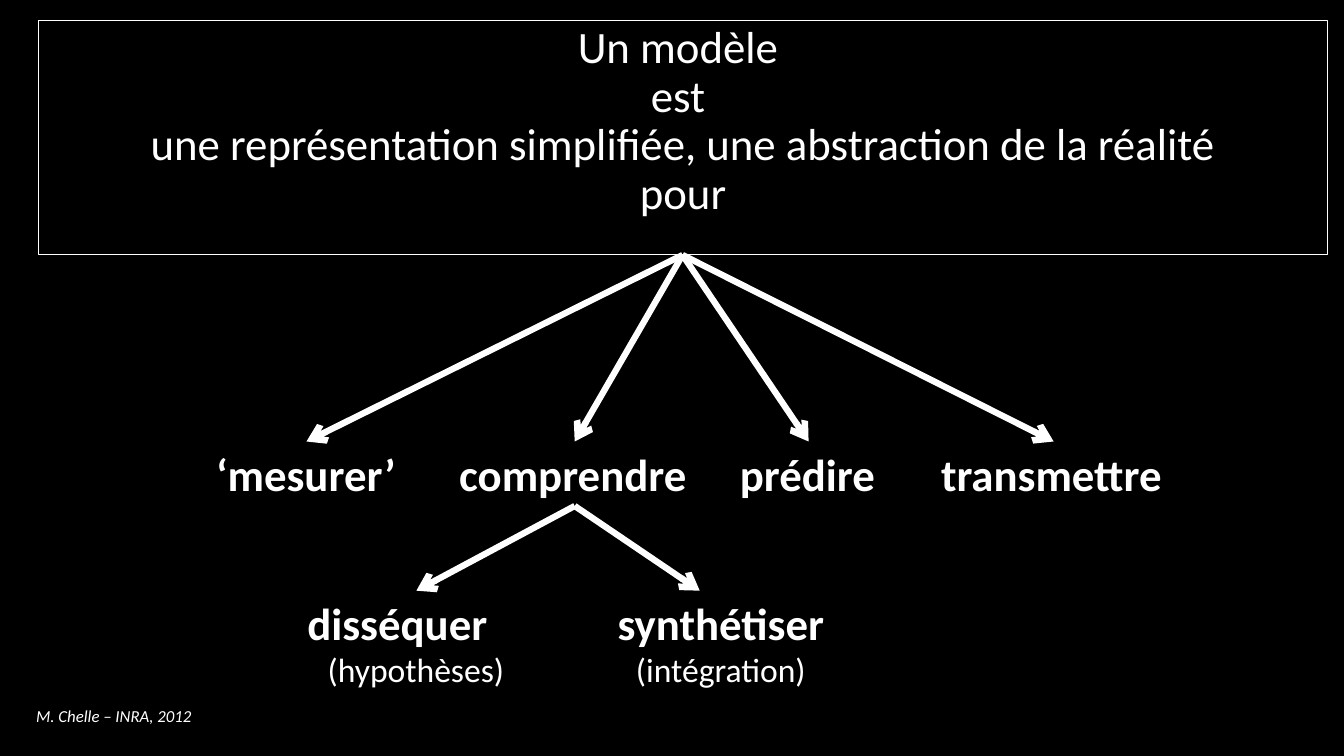
from lxml import etree
from pptx import Presentation
from pptx.dml.color import RGBColor
from pptx.enum import shapes, text
from pptx.oxml.ns import qn
from pptx.util import Inches, Pt

WHITE, BLACK = "FFFFFF", "000000"
LEFT, CENTER = text.PP_ALIGN.LEFT, text.PP_ALIGN.CENTER


def color(value):
    return RGBColor.from_string(value)


def write(frame, lines, wrap=True, anchor=text.MSO_ANCHOR.TOP):
    """Fill a text frame with (text, size, bold, italic, alignment) lines."""
    frame.word_wrap = wrap
    frame.vertical_anchor = anchor
    for index, (words, size, bold, italic, alignment) in enumerate(lines):
        paragraph = frame.add_paragraph() if index else frame.paragraphs[0]
        paragraph.text = words
        paragraph.alignment = alignment
        paragraph.font.name = "Calibri"
        paragraph.font.size = Pt(size)
        paragraph.font.bold = bold
        paragraph.font.italic = italic
        paragraph.font.color.rgb = color(WHITE)


presentation = Presentation()
presentation.slide_width = Inches(13.33)
presentation.slide_height = Inches(7.5)
slide = presentation.slides.add_slide(presentation.slide_layouts[5])
slide.background.fill.solid()
slide.background.fill.fore_color.rgb = color(BLACK)

# Framed definition
definition = slide.shapes.title
definition.left, definition.top = Inches(0.38), Inches(0.2)
definition.width, definition.height = Inches(12.79), Inches(2.33)
definition.line.color.rgb = color(WHITE)
definition.line.width = Pt(0.75)
sentence = ["Un modèle ", "est ",
            "une représentation simplifiée, une abstraction de la réalité", "pour"]
write(definition.text_frame, [(line, 32, False, False, CENTER) for line in sentence])
definition.text_frame.auto_size = text.MSO_AUTO_SIZE.NONE
for paragraph in definition.text_frame.paragraphs:
    paragraph.line_spacing = 0.9

# Purposes: label, centre, width
purpose_top, purpose_height = 4.38, 0.64
purposes = [("‘mesurer’", 3.04, 1.99), ("comprendre", 5.7, 2.49),
            ("prédire", 8.02, 1.56), ("transmettre", 10.45, 2.43)]
for label, center, width in purposes:
    box = slide.shapes.add_textbox(Inches(center - width / 2), Inches(purpose_top),
                                   Inches(width), Inches(purpose_height))
    write(box.text_frame, [(label, 32, True, False, LEFT)], wrap=False)

# Ways of understanding: label, detail, left, width, label alignment
step_top = 5.86
steps = [("disséquer", "(hypothèses)", 2.95, 2.35, LEFT),
         ("synthétiser", "(intégration)", 6.01, 2.28, CENTER)]
for label, detail, left, width, alignment in steps:
    box = slide.shapes.add_textbox(Inches(left), Inches(step_top),
                                   Inches(width), Inches(1.04))
    write(box.text_frame, [(label, 32, True, False, alignment),
                           (detail, 24, False, False, CENTER)])

# Arrows fanning out from the definition and from "comprendre"
fans = [(6.77, 2.53, purpose_top, [center for _, center, _ in purposes]),
        (5.7, purpose_top + purpose_height, step_top, [4.13, 6.94])]
for start_x, start_y, end_y, ends in fans:
    for end_x in ends:
        arrow = slide.shapes.add_connector(
            shapes.MSO_CONNECTOR.STRAIGHT, Inches(start_x), Inches(start_y),
            Inches(end_x), Inches(end_y))
        arrow.line.color.rgb = color(WHITE)
        arrow.line.width = Pt(4.5)
        etree.SubElement(arrow.line._get_or_add_ln(), qn("a:tailEnd"), type="arrow")
        etree.SubElement(arrow._element.spPr, qn("a:effectLst"))

# Source
source = slide.shapes.add_textbox(Inches(0.26), Inches(6.9), Inches(2.33), Inches(0.4))
write(source.text_frame, [("M. Chelle – INRA, 2012", 12, False, True, LEFT)],
      anchor=text.MSO_ANCHOR.MIDDLE)

presentation.save("out.pptx")
